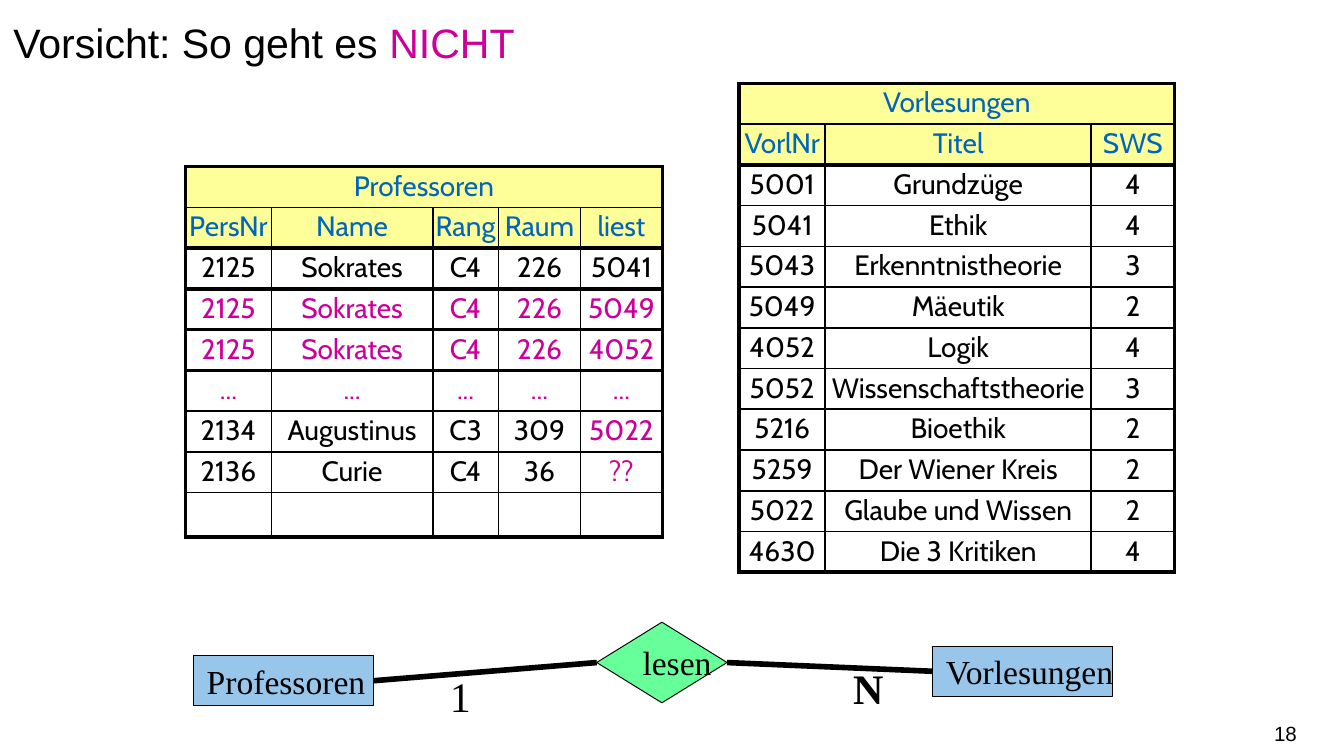
"""Build a slide that shows a wrong relational mapping of a 1:N relationship."""
from lxml.etree import SubElement
from pptx import Presentation
from pptx.dml.color import RGBColor
from pptx.enum.shapes import MSO_CONNECTOR, MSO_SHAPE
from pptx.enum.text import MSO_ANCHOR, PP_ALIGN
from pptx.oxml.ns import qn
from pptx.util import Inches, Pt

BLACK = RGBColor(0x00, 0x00, 0x00)
MAGENTA = RGBColor(0xCC, 0x00, 0x99)
HEADER_BLUE = RGBColor(0x00, 0x65, 0xBD)
HEADER_YELLOW = RGBColor(0xFF, 0xFF, 0x99)
ENTITY_BLUE = RGBColor(0x98, 0xC6, 0xEA)
RELATION_GREEN = RGBColor(0x66, 0xFF, 0x99)
THIN, THICK = 1, 2.25
SERIF = "Times New Roman"

TITLE = [("Vorsicht: So geht es ", BLACK), ("NICHT", MAGENTA)]
PROFESSORS = {
    "name": "Professoren",
    "place": (1.38, 1.24),
    "columns": [("PersNr", 0.64), ("Name", 1.2), ("Rang", 0.49), ("Raum", 0.61), ("liest", 0.61)],
    "rows": [
        ("2125", "Sokrates", "C4", "226", "5041"),
        ("2125", "Sokrates", "C4", "226", "5049"),
        ("2125", "Sokrates", "C4", "226", "4052"),
        ("...", "...", "...", "...", "..."),
        ("2134", "Augustinus", "C3", "309", "5022"),
        ("2136", "Curie", "C4", "36", "??"),
        ("", "", "", "", ""),
    ],
    "thick_rules": {0, 2, 3, 4, 5, 9},
    "marked": {(row, column) for row in (1, 2, 3) for column in range(5)} | {(4, 4), (5, 4)},
    "last_height": 0.33,
}
LECTURES = {
    "name": "Vorlesungen",
    "place": (5.5, 0.62),
    "columns": [("VorlNr", 0.64), ("Titel", 1.98), ("SWS", 0.62)],
    "rows": [
        ("5001", "Grundzüge", "4"),
        ("5041", "Ethik", "4"),
        ("5043", "Erkenntnistheorie", "3"),
        ("5049", "Mäeutik", "2"),
        ("4052", "Logik", "4"),
        ("5052", "Wissenschaftstheorie", "3"),
        ("5216", "Bioethik", "2"),
        ("5259", "Der Wiener Kreis", "2"),
        ("5022", "Glaube und Wissen", "2"),
        ("4630", "Die 3 Kritiken", "4"),
    ],
    "thick_rules": {0, 2, 12},
    "marked": set(),
    "last_height": 0.3,
}
ROW_HEIGHT = 0.3
NODES = [
    ("Professoren", MSO_SHAPE.RECTANGLE, ENTITY_BLUE, (1.44, 4.88, 1.34, 0.37)),
    ("Vorlesungen", MSO_SHAPE.RECTANGLE, ENTITY_BLUE, (6.94, 4.81, 1.34, 0.37)),
    ("lesen", MSO_SHAPE.DIAMOND, RELATION_GREEN, (4.44, 4.63, 0.97, 0.6)),
]
LINKS = [("Professoren", 3, "lesen", 1), ("Vorlesungen", 1, "lesen", 3)]
CARDINALITIES = [("1", False, (3.25, 4.94, 0.36, 0.48)), ("N", True, (6.25, 4.88, 0.43, 0.48))]
PAGE_NUMBER = ("18", (7.41, 5.31, 2.24, 0.3))


def set_font(font, name, size, color, bold=False):
    font.name, font.size, font.bold = name, Pt(size), bold
    font.color.rgb = color


def set_borders(cell, widths):
    properties = cell._tc.get_or_add_tcPr()
    for index, (side, width) in enumerate(zip(("lnL", "lnR", "lnT", "lnB"), widths)):
        line = properties.makeelement(qn(f"a:{side}"), {"w": str(Pt(width))})
        fill = SubElement(line, qn("a:solidFill"))
        SubElement(fill, qn("a:srgbClr"), val=str(BLACK))
        properties.insert(index, line)


def add_relation(page, relation):
    labels, widths = zip(*relation["columns"])
    last_column = len(labels) - 1
    name_row = (relation["name"],) + ("",) * last_column
    rows = [name_row, labels] + relation["rows"]
    heights = [ROW_HEIGHT] * (len(rows) - 1) + [relation["last_height"]]
    left, top = relation["place"]
    table = page.shapes.add_table(
        len(rows), len(labels), Inches(left), Inches(top), Inches(sum(widths)), Inches(sum(heights))
    ).table
    table.first_row = table.horz_banding = False
    for column, width in zip(table.columns, widths):
        column.width = Inches(width)
    for row, height in zip(table.rows, heights):
        row.height = Inches(height)

    rules = [THICK if i in relation["thick_rules"] else THIN for i in range(len(rows) + 1)]
    for i, values in enumerate(rows):
        for j, value in enumerate(values):
            cell = table.cell(i, j)
            cell.margin_left = cell.margin_right = 0
            cell.margin_top = cell.margin_bottom = Pt(2.7)
            if i < 2:
                color = HEADER_BLUE
                cell.fill.solid()
                cell.fill.fore_color.rgb = HEADER_YELLOW
            else:
                color = MAGENTA if (i - 2, j) in relation["marked"] else BLACK
                cell.fill.background()
            cell.text = value
            para = cell.text_frame.paragraphs[0]
            para.alignment, para.line_spacing = PP_ALIGN.CENTER, 0.9
            set_font(para.font, "Cabin", 15, color)
            left_width = THICK if j == 0 or i == 0 else THIN
            right_width = THICK if j == last_column or i == 0 else THIN
            set_borders(cell, (left_width, right_width, rules[i], rules[i + 1]))
    table.cell(0, 0).merge(table.cell(0, last_column))


def add_label(page, text, place, font_name, size, bold=False):
    box = page.shapes.add_textbox(*map(Inches, place))
    para = box.text_frame.paragraphs[0]
    para.text = text
    set_font(para.font, font_name, size, BLACK, bold)
    return box.text_frame


def add_node(page, text, kind, color, place):
    node = page.shapes.add_shape(kind, *map(Inches, place))
    node.shadow.inherit = False
    node.fill.solid()
    node.fill.fore_color.rgb = color
    node.line.color.rgb, node.line.width = BLACK, Pt(0.5)
    frame = node.text_frame
    frame.word_wrap, frame.vertical_anchor = False, MSO_ANCHOR.MIDDLE
    para = frame.paragraphs[0]
    para.text, para.alignment = text, PP_ALIGN.LEFT
    set_font(para.font, SERIF, 18, BLACK)
    return node


def add_link(page, start, start_site, end, end_site):
    link = page.shapes.add_connector(MSO_CONNECTOR.STRAIGHT, 0, 0, 0, 0)
    link.begin_connect(start, start_site)
    link.end_connect(end, end_site)
    link.line.color.rgb, link.line.width = BLACK, Pt(3)
    SubElement(link._element.spPr, qn("a:effectLst"))


def add_title(page):
    title = page.shapes.title
    title.left, title.top, title.width, title.height = map(Inches, (0, 0, 10, 0.94))
    frame = title.text_frame
    frame.vertical_anchor, frame.margin_top = MSO_ANCHOR.TOP, Inches(0.04)
    para = frame.paragraphs[0]
    para.alignment, para.line_spacing = PP_ALIGN.LEFT, 1.25
    for text, color in TITLE:
        span = para.add_run()
        span.text = text
        set_font(span.font, "Arial", 22, color)


def main():
    deck = Presentation()
    deck.slide_width = Inches(10)
    deck.slide_height = deck.slide_width * 9 // 16
    page = deck.slides.add_slide(deck.slide_layouts[5])
    add_title(page)
    for relation in (PROFESSORS, LECTURES):
        add_relation(page, relation)
    nodes = {node[0]: add_node(page, *node) for node in NODES}
    for start, start_site, end, end_site in LINKS:
        add_link(page, nodes[start], start_site, nodes[end], end_site)
    for text, bold, place in CARDINALITIES:
        add_label(page, text, place, SERIF, 22.5, bold).word_wrap = False
    number = add_label(page, *PAGE_NUMBER, "Arial", 11)
    number.word_wrap, number.vertical_anchor = True, MSO_ANCHOR.MIDDLE
    number.margin_left = number.margin_right = 0
    number.paragraphs[0].alignment = PP_ALIGN.RIGHT
    deck.save("out.pptx")


if __name__ == "__main__":
    main()
